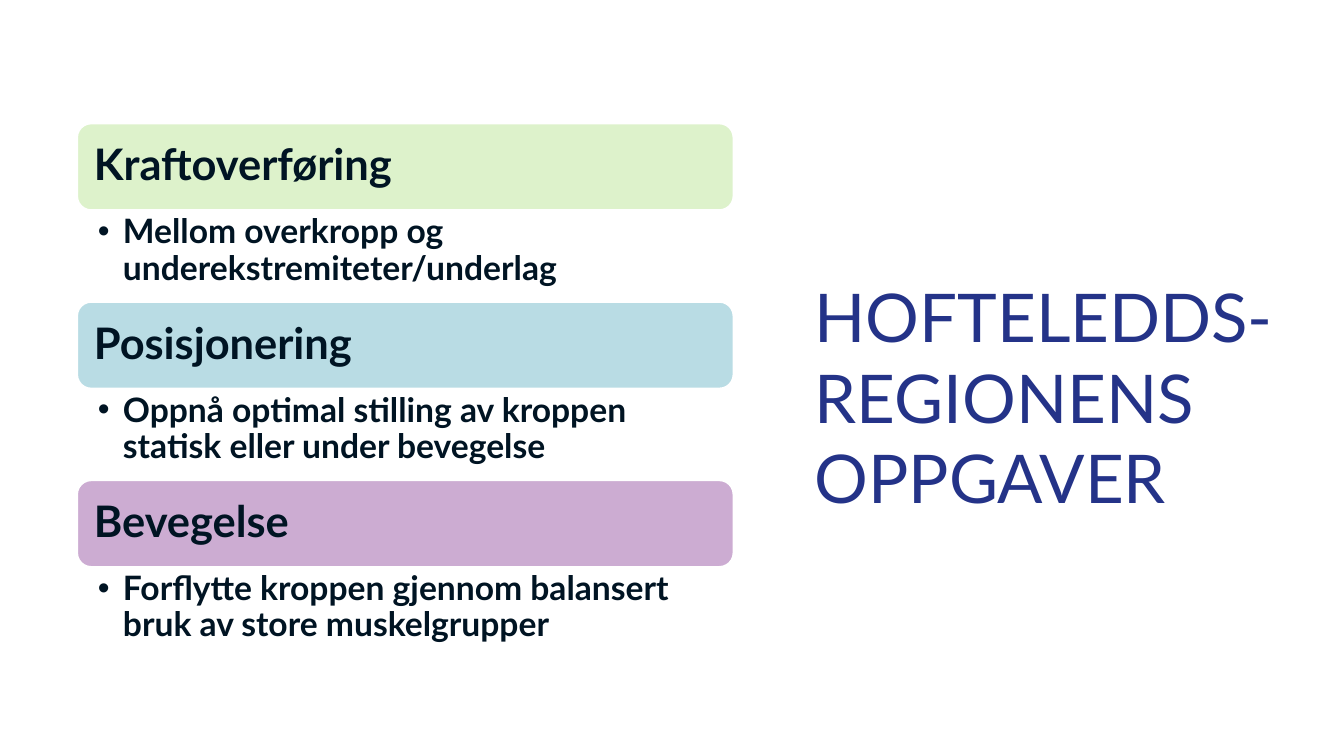
from lxml.etree import SubElement
from pptx import Presentation
from pptx.dml.color import RGBColor
from pptx.enum.shapes import MSO_SHAPE
from pptx.enum.text import MSO_ANCHOR, MSO_AUTO_SIZE, PP_ALIGN
from pptx.oxml.ns import qn
from pptx.util import Pt

PX = 9144  # 100 px to the inch
FONT = "Lato"
COLORS = {
    "title": "243388",
    "text": "001423",
    "outline": "FFFFFF",
    "green": "DDF2CB",
    "blue": "B9DCE4",
    "purple": "CCACD2",
}
TASKS = [
    ("Kraftoverføring", "Mellom overkropp og underekstremiteter/underlag", "green"),
    ("Posisjonering", "Oppnå optimal stilling av kroppen statisk eller under bevegelse", "blue"),
    ("Bevegelse", "Forflytte kroppen gjennom balansert bruk av store muskelgrupper", "purple"),
]
BANNER_HEIGHT = 87
TASK_PITCH = 177


def color(name):
    return RGBColor.from_string(COLORS[name])


def place(shape, box):
    shape.left, shape.top, shape.width, shape.height = (value * PX for value in box)


def write(shape, text, size, color_name, margins, anchor, bold=False, spacing=1.0):
    frame = shape.text_frame
    frame.word_wrap = True
    frame.auto_size = MSO_AUTO_SIZE.NONE
    frame.vertical_anchor = anchor
    (frame.margin_left, frame.margin_top,
     frame.margin_right, frame.margin_bottom) = (value * PX for value in margins)
    paragraph = frame.paragraphs[0]
    paragraph.alignment = PP_ALIGN.LEFT
    paragraph.line_spacing = spacing
    paragraph.space_before = Pt(0)
    run = paragraph.add_run()
    run.text = text
    run.font.name = FONT
    run.font.size = Pt(size)
    run.font.bold = bold
    run.font.color.rgb = color(color_name)
    return paragraph


def add_bullet(paragraph, indent):
    properties = paragraph._p.get_or_add_pPr()
    properties.set("marL", str(indent * PX))
    properties.set("indent", str(-indent * PX))
    SubElement(properties, qn("a:buFont"), typeface="Arial")
    SubElement(properties, qn("a:buChar"), char="•")


def build_title(slide, box):
    title = slide.shapes.title
    place(title, box)
    write(title, "HOFTELEDDS-REGIONENS OPPGAVER", 48, "title", (0, 0, 0, 0), MSO_ANCHOR.TOP)


def build_task(slide, body, box, heading, description, fill):
    left, top, width, height = box

    # Coloured banner with the heading
    banner = slide.shapes.add_shape(MSO_SHAPE.ROUNDED_RECTANGLE, 0, 0, 0, 0)
    place(banner, (left, top, width, BANNER_HEIGHT))
    banner.shadow.inherit = False
    banner.fill.solid()
    banner.fill.fore_color.rgb = color(fill)
    banner.line.color.rgb = color("outline")
    banner.line.width = Pt(2)
    write(banner, heading, 31, "text", (13, 13, 13, 13), MSO_ANCHOR.MIDDLE, True, 0.9)

    # Bulleted description below it
    place(body, (left, top + BANNER_HEIGHT, width, height - BANNER_HEIGHT))
    paragraph = write(body, description, 24, "text", (21, 4, 24, 4), MSO_ANCHOR.TOP, True, 0.9)
    add_bullet(paragraph, 25)


def build_tasks(slide, box):
    left, top, width, height = box
    bodies = [shape for shape in slide.placeholders if shape.placeholder_format.idx > 0]
    for index, (body, task) in enumerate(zip(bodies, TASKS)):
        build_task(slide, body, (left, top + index * TASK_PITCH, width, height // len(TASKS)), *task)
    for unused in bodies[len(TASKS):]:
        unused.element.getparent().remove(unused.element)


def main():
    presentation = Presentation()
    presentation.slide_width = 1333 * PX
    presentation.slide_height = 750 * PX
    # The comparison layout offers a title and several bodies
    slide = presentation.slides.add_slide(presentation.slide_layouts[4])
    build_title(slide, (808, 273, 470, 294))
    build_tasks(slide, (76, 122, 652, 531))
    presentation.save("out.pptx")


if __name__ == "__main__":
    main()
